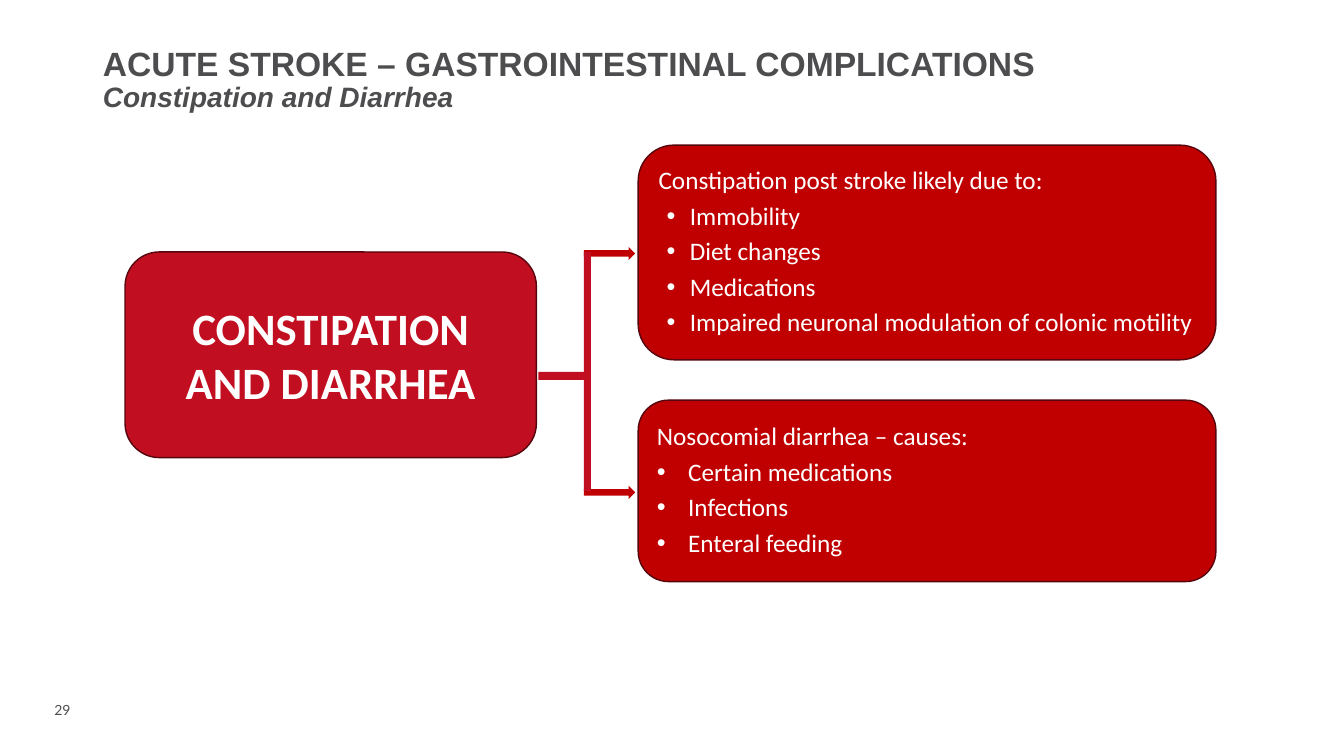
from lxml import etree
from pptx import Presentation
from pptx.dml.color import RGBColor
from pptx.enum.shapes import MSO_SHAPE
from pptx.enum.text import MSO_ANCHOR, MSO_AUTO_SIZE, PP_ALIGN
from pptx.oxml.ns import qn
from pptx.util import Emu, Pt

CARD = MSO_SHAPE.FLOWCHART_ALTERNATE_PROCESS
ARROW = MSO_SHAPE.RIGHT_ARROW
BAR = MSO_SHAPE.RECTANGLE
LEFT, CENTER = PP_ALIGN.LEFT, PP_ALIGN.CENTER
MIDDLE, BOTTOM = MSO_ANCHOR.MIDDLE, MSO_ANCHOR.BOTTOM
NO_AUTOSIZE = MSO_AUTO_SIZE.NONE
TITLE_ONLY = 5

EMU_PER_PX = 9144
GRAY, WHITE = "4D4D4F", "FFFFFF"
CRIMSON, RED, OUTLINE = "C10E20", "C00000", "55060E"

CAUSE_LEFT, CAUSE_WIDTH = 633, 573
TRUNK_LEFT, TRUNK_WIDTH = 579, 7
ARROW_WIDTH, ARROW_HEIGHT = 51, 13
CAUSES = [
    (144, 213, -23, "Constipation post stroke likely due to:",
     ["Immobility", "Diet changes", "Medications",
      "Impaired neuronal modulation of colonic motility"]),
    (397, 180, -31, "Nosocomial diarrhea – causes:",
     ["Certain medications", "Infections", "Enteral feeding"]),
]


def px(length):
    return Emu(length * EMU_PER_PX)


def color(value):
    return RGBColor.from_string(value)


def write(paragraph, text, size=18, font="Calibri", fill=WHITE,
          bold=False, italic=False, align=LEFT, spacing=1.0, before=0):
    paragraph.alignment = align
    paragraph.line_spacing = spacing
    paragraph.space_before = Pt(before)
    run = paragraph.add_run()
    run.text = text
    run.font.size = Pt(size)
    run.font.name = font
    run.font.bold = bold
    run.font.italic = italic
    run.font.color.rgb = color(fill)


def add_bullet(paragraph, indent):
    properties = paragraph._p.get_or_add_pPr()
    properties.set("marL", str(px(31)))
    properties.set("indent", str(px(indent)))
    etree.SubElement(properties, qn("a:buFont"), typeface="Arial")
    etree.SubElement(properties, qn("a:buChar"), char="•")


def add_block(slide, kind, left, top, width, height, fill, outline=None):
    block = slide.shapes.add_shape(kind, px(left), px(top), px(width), px(height))
    block.shadow.inherit = False
    block.fill.solid()
    block.fill.fore_color.rgb = color(fill)
    if outline:
        block.line.color.rgb = color(outline)
        block.line.width = Pt(1)
    else:
        block.line.fill.background()
    return block


def add_card(slide, left, top, width, height, fill):
    frame = add_block(slide, CARD, left, top, width, height, fill, OUTLINE).text_frame
    frame.word_wrap = True
    frame.vertical_anchor = MIDDLE
    return frame


def add_cause(slide, top, height, indent, heading, items):
    frame = add_card(slide, CAUSE_LEFT, top, CAUSE_WIDTH, height, RED)
    write(frame.paragraphs[0], heading, spacing=0.9)
    for item in items:
        paragraph = frame.add_paragraph()
        write(paragraph, item, spacing=0.9, before=6)
        add_bullet(paragraph, indent)


def add_heading(slide):
    title = slide.shapes.title
    title.left, title.top, title.width, title.height = map(px, (92, 57, 1150, 61))
    frame = title.text_frame
    frame.word_wrap = True
    frame.auto_size = NO_AUTOSIZE
    frame.vertical_anchor = BOTTOM
    paragraph = frame.paragraphs[0]
    style = {"font": "Arial", "fill": GRAY, "bold": True, "spacing": 0.9}
    write(paragraph, "ACUTE STROKE – GASTROINTESTINAL COMPLICATIONS", size=24, **style)
    paragraph.add_line_break()
    write(paragraph, "Constipation and Diarrhea", size=20, italic=True, **style)


def add_page_number(slide):
    box = slide.shapes.add_textbox(px(44), px(691), px(39), px(27))
    write(box.text_frame.paragraphs[0], "29", size=10, font="Lato", fill=GRAY)


def add_branches(slide):
    for top in (245, 482):
        add_block(slide, ARROW, TRUNK_LEFT, top, ARROW_WIDTH, ARROW_HEIGHT, RED)
    add_block(slide, BAR, TRUNK_LEFT, 250, TRUNK_WIDTH, 237, CRIMSON)
    add_block(slide, BAR, 534, 369, 47, 8, CRIMSON)


def main():
    deck = Presentation()
    deck.slide_width, deck.slide_height = px(1333), px(750)
    slide = deck.slides.add_slide(deck.slide_layouts[TITLE_ONLY])
    add_page_number(slide)
    add_heading(slide)
    topic = add_card(slide, 124, 250, 408, 204, CRIMSON)
    write(topic.paragraphs[0], "CONSTIPATION AND DIARRHEA",
          size=32, bold=True, align=CENTER)
    for cause in CAUSES:
        add_cause(slide, *cause)
    add_branches(slide)
    deck.save("out.pptx")


if __name__ == "__main__":
    main()
